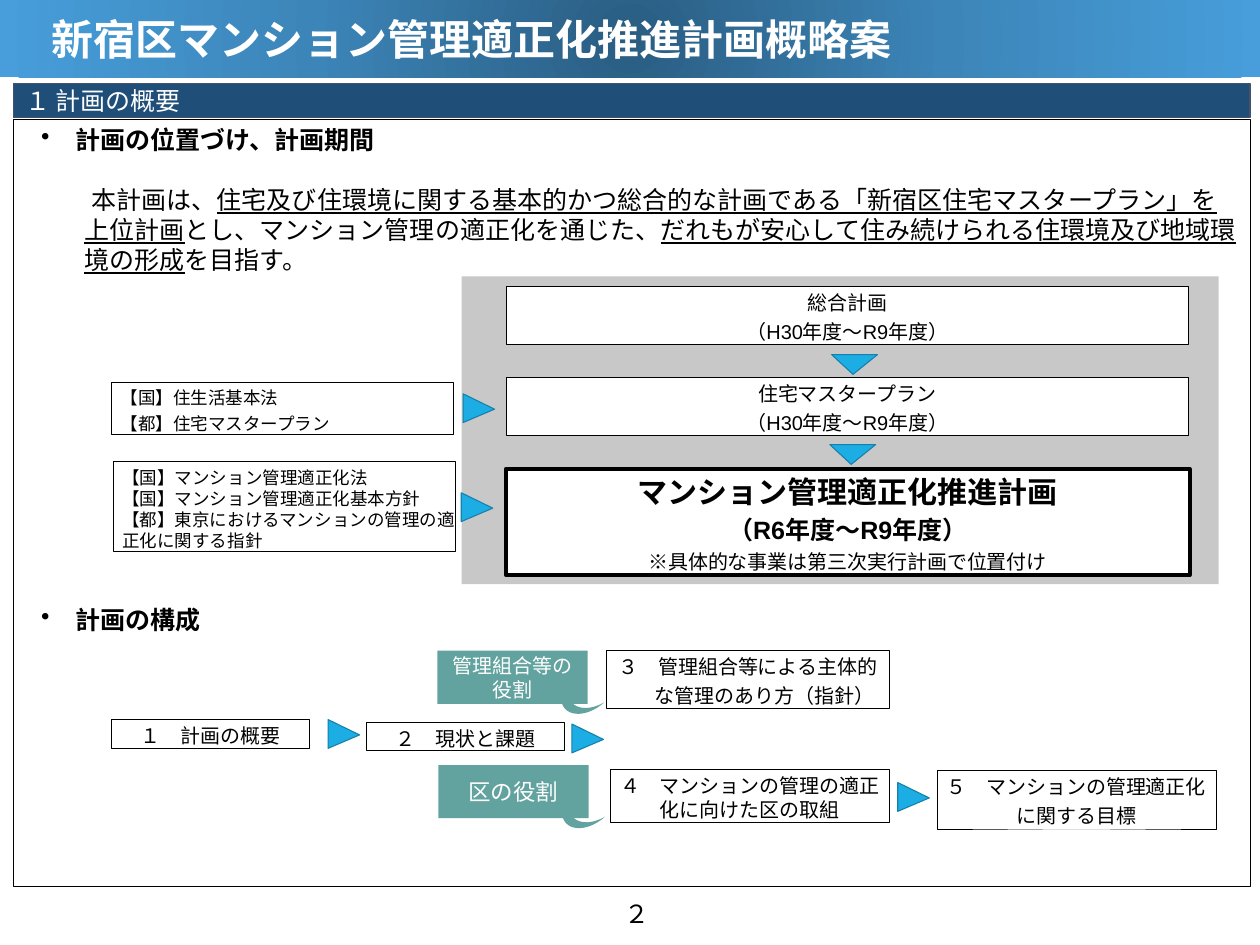
from pptx import Presentation
from pptx.dml.color import RGBColor
from pptx.enum.shapes import MSO_SHAPE
from pptx.enum.text import MSO_ANCHOR, PP_ALIGN
from pptx.oxml import parse_xml
from pptx.oxml.ns import nsdecls
from pptx.util import Inches, Pt

RECT, TRI, MOON = MSO_SHAPE.RECTANGLE, MSO_SHAPE.ISOSCELES_TRIANGLE, MSO_SHAPE.MOON
TOP, MID = MSO_ANCHOR.TOP, MSO_ANCHOR.MIDDLE
LEFT, MIDDLE = PP_ALIGN.LEFT, PP_ALIGN.CENTER

BLACK = RGBColor(0, 0, 0)
WHITE = RGBColor(0xFF, 0xFF, 0xFF)
GREY = RGBColor(0xC8, 0xC8, 0xC8)
NAVY = RGBColor(0x1F, 0x4E, 0x79)
SLATE = RGBColor(0x44, 0x53, 0x6A)
SKY = RGBColor(0x1C, 0xAD, 0xE4)
OCEAN = RGBColor(0x15, 0x80, 0xA9)
TEAL = RGBColor(0x62, 0xA3, 0x9F)
GLOW = ((0, "2A5D82"), (50, "3C85B8"), (100, "479EDB"))

SANS, BODY, GOTHIC = "Arial", "Calibri", "Noto Sans CJK JP"
PAD = (0.1, 0.05, 0.1, 0.05)
TIGHT = (0, 0.05, 0, 0)
TERM = "（H30年度～R9年度）"


def write(frame, text, first=False, size=16, font=SANS, color=BLACK, bold=False,
          align=LEFT, before=0, left=0, hang=0, bullet=None):
    """Add a paragraph; text is a string or a list of (string, underlined)."""
    para = frame.paragraphs[0] if first else frame.add_paragraph()
    para.alignment, para.space_before = align, Pt(before)
    props = para._p.get_or_add_pPr()
    props.set("marL", str(Inches(left)))
    props.set("indent", str(Inches(hang)))
    if bullet:
        props.append(parse_xml(f'<a:buChar {nsdecls("a")} char="{bullet}"/>'))
    for part, under in [(text, False)] if isinstance(text, str) else text:
        run = para.add_run()
        run.text = part
        run.font.name, run.font.size = font, Pt(size)
        run.font.bold, run.font.underline = bold, under
        run.font.color.rgb = color


class Deck:
    def __init__(self):
        self.show = Presentation()
        self.show.slide_width, self.show.slide_height = Inches(14), Inches(10.5)
        self.slide = self.show.slides.add_slide(self.show.slide_layouts[6])

    def shape(self, kind, x, y, w, h, fill=None, line=None, width=0.25):
        item = self.slide.shapes.add_shape(kind, *map(Inches, (x, y, w, h)))
        item.shadow.inherit = False
        if fill is None:
            item.fill.background()
        else:
            item.fill.solid()
            item.fill.fore_color.rgb = fill
        if line is None:
            item.line.fill.background()
        else:
            item.line.color.rgb, item.line.width = line, Pt(width)
        return item

    def fit(self, item, pad=PAD, anchor=TOP):
        frame = item.text_frame
        frame.word_wrap, frame.vertical_anchor = True, anchor
        (frame.margin_left, frame.margin_top,
         frame.margin_right, frame.margin_bottom) = map(Inches, pad)
        return frame

    def box(self, x, y, w, h, lines, fill=WHITE, width=0.25, anchor=TOP, **style):
        """Outlined box; each line is a string or (string, own format)."""
        item = self.shape(RECT, x, y, w, h, fill, BLACK, width)
        frame = self.fit(item, TIGHT, anchor)
        base = {"align": MIDDLE, "before": 4, **style}
        for i, line in enumerate(lines):
            text, own = (line, {}) if isinstance(line, str) else line
            write(frame, text, first=i == 0, **{**base, **own})

    def band(self, x, y, w, h, text, fill, pad, line=None, width=1, **style):
        """Filled bar with one line of text, centred in height."""
        item = self.shape(RECT, x, y, w, h, fill, line, width)
        write(self.fit(item, pad, MID), text, first=True, color=WHITE, **style)
        return item

    def glow(self, item):
        """Radial gradient fill, from the centre outwards."""
        stops = "".join(f'<a:gs pos="{pos * 1000}"><a:srgbClr val="{tone}"/></a:gs>'
                        for pos, tone in GLOW)
        item.fill.gradient()
        props = item._element.spPr
        old = props.find("{*}gradFill")
        props.replace(old, parse_xml(
            f'<a:gradFill {nsdecls("a")} rotWithShape="1"><a:gsLst>{stops}</a:gsLst>'
            '<a:path path="circle"><a:fillToRect l="50000" t="50000" r="50000" '
            'b="50000"/></a:path></a:gradFill>'))

    def arrow(self, x, y, w, h, turn):
        item = self.shape(TRI, x, y, w, h, SKY, OCEAN, 0.85)
        item.rotation, item.adjustments[0] = turn, 0.535

    def label(self, x, y, text, size):
        """Role label with a curved tail at its lower right."""
        self.band(x, y, 1.67, 0.59, text, TEAL, PAD, size=size, font=BODY, align=MIDDLE)
        tail = self.shape(MOON, x + 1.37, y + 0.28, 0.37, 0.48, TEAL)
        tail.rotation, tail.adjustments[0] = 317.9, 0.274

    def body(self):
        item = self.shape(RECT, 0.15, 1.33, 13.74, 8.52, line=BLACK, width=0.75)
        frame = self.fit(item)
        head = {"size": 20, "font": BODY, "bold": True,
                "left": 0.59, "hang": -0.38, "bullet": "•"}
        write(frame, "計画の位置づけ、計画期間", first=True, **head)
        write(frame, [
            ("本計画は、", False),
            ("住宅及び住環境に関する基本的かつ総合的な計画である"
             "「新宿区住宅マスタープラン」を上位計画", True),
            ("とし、マンション管理の適正化を通じた、", False),
            ("だれもが安心して住み続けられる住環境及び地域環境の形成", True),
            ("を目指す。", False),
        ], size=20, font=BODY, before=24, left=0.69, hang=0.08)
        write(frame, "計画の構成", before=264, **head)

    def note(self, x, y, w, h, text):
        item = self.slide.shapes.add_textbox(*map(Inches, (x, y, w, h)))
        write(self.fit(item), text, first=True, size=20, font=BODY)


def main():
    deck = Deck()
    title = deck.band(0, 0, 14, 0.86, "新宿区マンション管理適正化推進計画概略案", NAVY,
                      (0.57, 0.05, 0.1, 0.05), size=33.6, font=GOTHIC, bold=True)
    deck.glow(title)
    deck.body()
    deck.band(0.15, 0.93, 13.74, 0.38, "１ 計画の概要", NAVY, (0.13, 0, 0, 0),
              line=SLATE, size=20, font=BODY)

    # Place among the higher plans
    deck.shape(RECT, 5.13, 3.07, 8.41, 3.42, GREY)
    for y, name in ((3.18, "総合計画"), (4.19, "住宅マスタープラン")):
        deck.box(5.63, y, 7.57, 0.65, [name, TERM])
    deck.box(5.62, 5.21, 7.6, 1.18, [
        ("マンション管理適正化推進計画", {"size": 24, "bold": True}),
        ("（R6年度～R9年度）", {"size": 20, "bold": True}),
        "※具体的な事業は第三次実行計画で位置付け"], width=3)
    law = {"fill": None, "size": 14, "font": GOTHIC, "align": LEFT, "left": 0.1}
    deck.box(1.24, 4.25, 3.79, 0.58, ["【国】住生活基本法", "【都】住宅マスタープラン"], **law)
    deck.box(1.26, 5.13, 3.8, 1, [
        ("【国】マンション管理適正化法", {"before": 4}),
        "【国】マンション管理適正化基本方針",
        "【都】東京におけるマンションの管理の適正化に関する指針"],
        anchor=MID, before=0, **law)
    for x, y in ((9.24, 3.94), (9.22, 4.94)):
        deck.arrow(x, y, 0.51, 0.22, 180)

    # Chapters of the plan
    deck.box(1.24, 7.99, 2.2, 0.32, ["１　計画の概要"])
    deck.box(4.07, 8.02, 2.2, 0.32, ["２　現状と課題"])
    deck.box(6.74, 7.22, 3.14, 0.65, [
        "３　管理組合等による主体的", ("な管理のあり方（指針）", {"left": 0.37})])
    deck.box(6.78, 8.55, 3.1, 0.59, ["４　マンションの管理の適正化に向けた区の取組"])
    deck.box(10.41, 8.56, 3.1, 0.65, ["５　マンションの管理適正化", "に関する目標"])
    deck.label(4.86, 7.23, "管理組合等の役割", 16)
    deck.label(4.87, 8.5, "区の役割", 18)
    for x, y in ((5.16, 4.36), (5.14, 5.46), (3.66, 7.98), (6.37, 8.03), (9.99, 8.68)):
        deck.arrow(x, y, 0.32, 0.35, 90)
    deck.note(6.84, 9.93, 0.71, 0.44, "２")
    deck.show.save("out.pptx")


if __name__ == "__main__":
    main()
